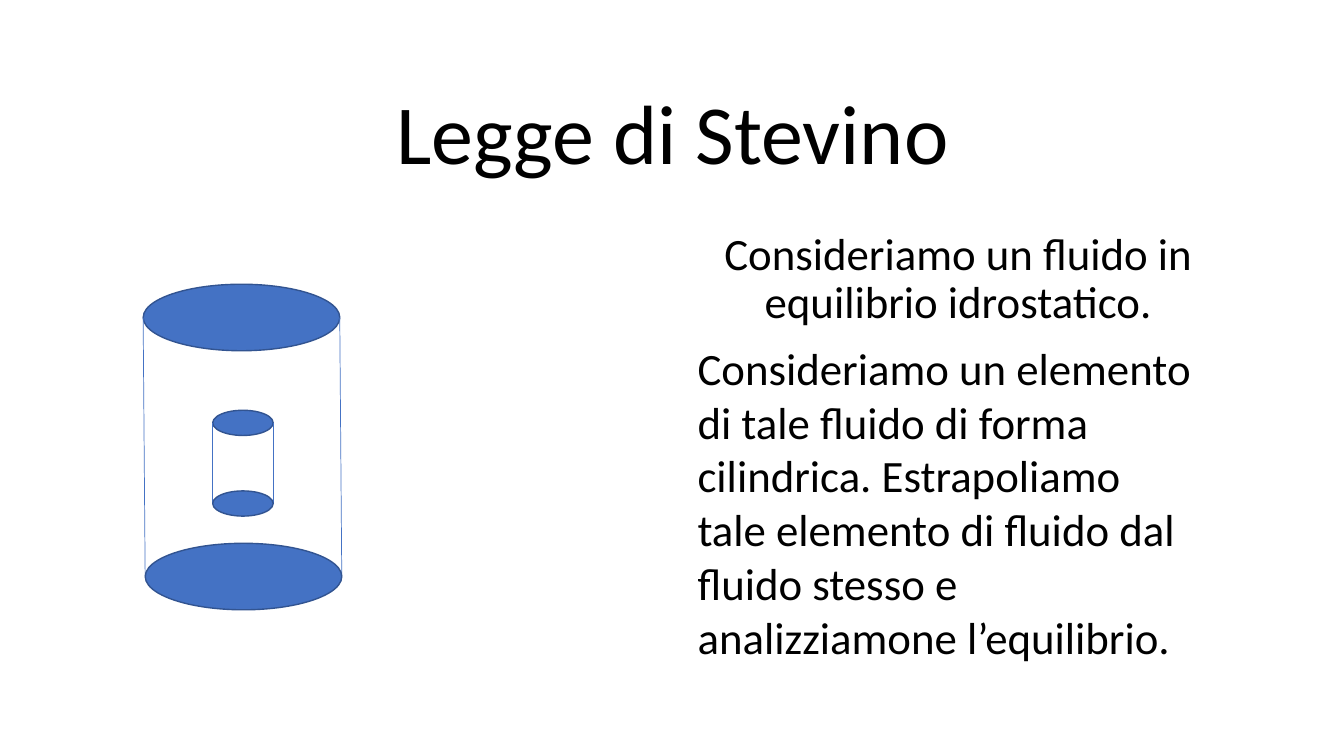
from pptx import Presentation
from pptx.dml.color import RGBColor
from pptx.enum.shapes import MSO_CONNECTOR, MSO_SHAPE
from pptx.enum.text import MSO_ANCHOR, MSO_AUTO_SIZE, PP_ALIGN
from pptx.oxml.ns import qn
from pptx.util import Inches, Pt
from lxml.etree import SubElement

COLORS = {"text": "000000", "fluid": "4472C4", "edge": "325491"}
FONT = "Calibri"


def rgb(name):
    return RGBColor.from_string(COLORS[name])


def write_text(sp, box, text, size, align, spacing=1.0, anchor=MSO_ANCHOR.TOP):
    sp.left, sp.top, sp.width, sp.height = (Inches(v) for v in box)
    tf = sp.text_frame
    tf.text = text
    tf.word_wrap = True
    tf.auto_size = MSO_AUTO_SIZE.NONE
    tf.vertical_anchor = anchor
    p = tf.paragraphs[0]
    p.alignment = align
    p.line_spacing = spacing
    font = p.runs[0].font
    font.name, font.size = FONT, Pt(size)
    font.color.rgb = rgb("text")


def add_title(s, box, text):
    write_text(s.shapes.title, box, text, 60, PP_ALIGN.CENTER, 0.9, MSO_ANCHOR.BOTTOM)


def add_text(s, box, text, align, spacing=1.0):
    sp = s.shapes.add_textbox(*(Inches(v) for v in box))
    write_text(sp, box, text, 32, align, spacing)


def add_disc(s, left, top, width, height):
    sp = s.shapes.add_shape(MSO_SHAPE.OVAL, *(Inches(v) for v in (left, top, width, height)))
    sp.shadow.inherit = False
    sp.fill.solid()
    sp.fill.fore_color.rgb = rgb("fluid")
    sp.line.color.rgb = rgb("edge")
    sp.line.width = Pt(1)


def add_side(s, x1, y1, x2, y2):
    line = s.shapes.add_connector(
        MSO_CONNECTOR.STRAIGHT, *(Inches(v) for v in (x1, y1, x2, y2)))
    line.line.color.rgb = rgb("fluid")
    line.line.width = Pt(0.5)
    SubElement(line._element.spPr, qn("a:effectLst"))


def add_cylinder(s, box, disc_height, shift=0):
    left, top, width, height = box
    base_top = top + height - disc_height
    add_disc(s, left, top, width, disc_height)
    for x in (left, left + width):
        add_side(s, x, top + disc_height / 2, x + shift, base_top + disc_height / 2)
    add_disc(s, left + shift, base_top, width, disc_height)


def build_slide(prs):
    s = prs.slides.add_slide(prs.slide_layouts[5])
    add_title(s, (1.67, 0.78, 10, 1.08), "Legge di Stevino")
    add_text(s, (6.82, 2.25, 5.37, 1.03),
             "Consideriamo un fluido in equilibrio idrostatico.", PP_ALIGN.CENTER, 0.9)
    add_cylinder(s, (1.42, 2.82, 1.95, 3.23), 0.66, 0.02)
    add_cylinder(s, (2.11, 4.07, 0.6, 1.05), 0.25)
    add_text(s, (6.82, 3.33, 5.12, 3.33),
             "Consideriamo un elemento di tale fluido di forma cilindrica. "
             "Estrapoliamo tale elemento di fluido dal fluido stesso e "
             "analizziamone l’equilibrio.", PP_ALIGN.LEFT)


def main():
    prs = Presentation()
    prs.slide_width, prs.slide_height = Inches(13.33), Inches(7.5)
    build_slide(prs)
    prs.save("out.pptx")


if __name__ == "__main__":
    main()
